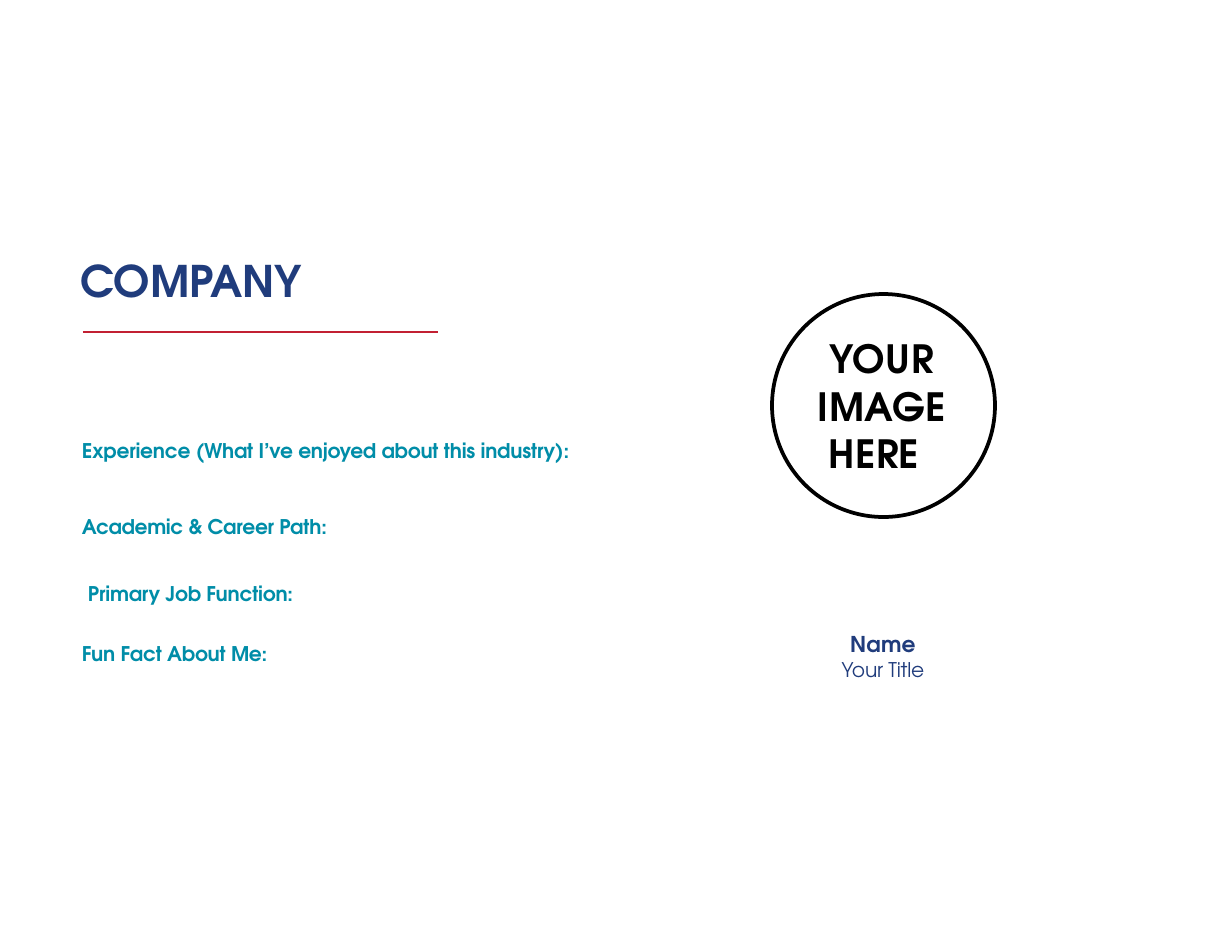
"""Build a company profile slide with a round portrait area."""
from pptx import Presentation
from pptx.dml.color import RGBColor
from pptx.enum.shapes import MSO_CONNECTOR, MSO_SHAPE
from pptx.enum.text import PP_ALIGN
from pptx.oxml.ns import qn
from pptx.util import Pt
from lxml.etree import SubElement

FONT = "TeX Gyre Adventor"
COLORS = {"navy": "203C7C", "teal": "008DA8", "red": "C22032", "black": "000000"}


def px(length):
    return round(length * 914400 / 112)


def add_text(box, paragraphs, color, align=PP_ALIGN.LEFT):
    frame = slide.shapes.add_textbox(*map(px, box)).text_frame
    frame.word_wrap = True
    frame.margin_left = frame.margin_right = frame.margin_top = frame.margin_bottom = 0
    for index, (runs, size, bold, indent, before, leading) in enumerate(paragraphs):
        paragraph = frame.add_paragraph() if index else frame.paragraphs[0]
        paragraph.alignment = align
        paragraph.line_spacing = leading
        if index:
            paragraph.space_before = Pt(before)
        paragraph._p.get_or_add_pPr().set("marL", str(px(indent)))
        for text, spacing in runs:
            run = paragraph.add_run()
            run.text = text
            run.font.name = FONT
            run.font.size = Pt(size)
            run.font.bold = bold
            run.font.color.rgb = RGBColor.from_string(COLORS[color])
            run._r.get_or_add_rPr().set("spc", str(spacing))


presentation = Presentation()
presentation.slide_width, presentation.slide_height = px(1232), px(952)
slide = presentation.slides.add_slide(presentation.slide_layouts[6])

company = [([("COMPAN", -10), ("Y", 0)], 28, True, 1, 0, 1.0)]
add_text((79, 254, 228, 55), company, "navy")

experience = [("Experience (What I’ve ", -10), ("enjoyed ", -20), ("about this industry):", -10)]
career = [("Academic ", -20), ("& Career Path:", -10)]
profile = [
    (experience, 13, True, 1, 0, 1.0),
    (career, 13, True, 1, 5.8, Pt(43.2)),
    ([("Primary Job Function:", -10)], 13, True, 7, 0, Pt(43.2)),
    ([("Fun Fact About ", -10), ("Me:", -20)], 13, True, 1, 23, 1.0),
]
add_text((81, 438, 492, 228), profile, "teal")

underline = slide.shapes.add_connector(MSO_CONNECTOR.STRAIGHT, px(83), px(332), px(438), px(332))
underline.line.color.rgb = RGBColor.from_string(COLORS["red"])
underline.line.width = Pt(1.2)
SubElement(underline._element.spPr, qn("a:effectLst"))

portrait = slide.shapes.add_shape(MSO_SHAPE.OVAL, px(772), px(294), px(223), px(223))
portrait.shadow.inherit = False
portrait.fill.background()
portrait.line.color.rgb = RGBColor.from_string(COLORS["black"])
portrait.line.width = Pt(2.4)

portrait_label = [
    ([("YOUR", 30)], 25, True, 13, 0, 1.02),
    ([("I", 10), ("MAG", 30), ("E", 0)], 25, True, 1, 0, 1.02),
    ([("HERE", 20)], 25, True, 12, 0, 1.02),
]
add_text((817, 334, 136, 144), portrait_label, "black")

person = [
    ([("Name", 10)], 14, True, 0, 0, 1.0),
    ([("Your Title", -10)], 13, False, 0, 0.2, 1.0),
]
add_text((839, 631, 88, 53), person, "navy", PP_ALIGN.CENTER)

presentation.save("out.pptx")
